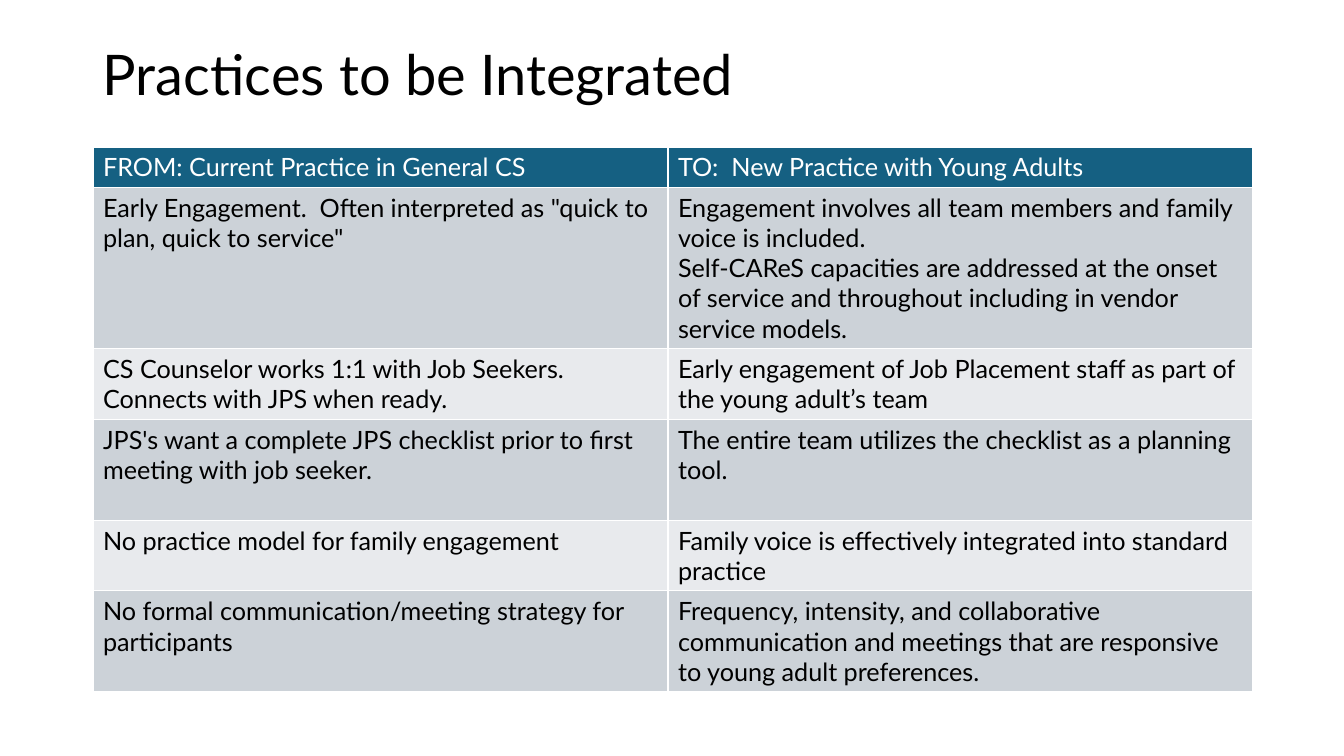
"""Build the slide that compares current practices with new ones."""
from lxml.etree import SubElement
from pptx import Presentation
from pptx.dml.color import RGBColor
from pptx.enum.text import MSO_ANCHOR
from pptx.oxml.ns import qn
from pptx.util import Emu, Pt

EMU_PER_PX = 914400 / 100.8
FONT = "Lato"
BLACK = RGBColor(0x00, 0x00, 0x00)
WHITE = RGBColor(0xFF, 0xFF, 0xFF)
HEADER_BLUE = RGBColor(0x15, 0x60, 0x82)
BAND_DARK = RGBColor(0xCC, 0xD2, 0xD8)
BAND_LIGHT = RGBColor(0xE8, 0xEA, 0xED)

LEFT, WIDTH = 93, 1160
COLUMN_WIDTHS = (575, 585)
ROW_HEIGHTS = (40, 161, 70, 101, 70, 101)
PRACTICES = (
    ("FROM: Current Practice in General CS",
     "TO:  New Practice with Young Adults"),
    ('Early Engagement.  Often interpreted as "quick to plan, quick to service"',
     "Engagement involves all team members and family voice is included.\n"
     "Self-CAReS capacities are addressed at the onset of service and "
     "throughout including in vendor service models."),
    ("CS Counselor works 1:1 with Job Seekers.  Connects with JPS when ready.",
     "Early engagement of Job Placement staff as part of the young adult’s team"),
    ("JPS's want a complete JPS checklist prior to first meeting with job seeker.",
     "The entire team utilizes the checklist as a planning tool."),
    ("No practice model for family engagement",
     "Family voice is effectively integrated into standard practice"),
    ("No formal communication/meeting strategy for participants",
     "Frequency, intensity, and collaborative communication and meetings that "
     "are responsive to young adult preferences."),
)


def px(length):
    """Turn a length in px into EMU."""
    return Emu(round(length * EMU_PER_PX))


def write_text(frame, text, size=18, color=BLACK, line_spacing=None):
    """Fill a text frame, one paragraph per line of text."""
    frame.text = text
    frame.word_wrap = True
    for paragraph in frame.paragraphs:
        paragraph.line_spacing = line_spacing
        for run in paragraph.runs:
            run.font.name = FONT
            run.font.size = Pt(size)
            run.font.bold = False
            run.font.color.rgb = color


def add_title(slide, text):
    """Add the slide title."""
    title = slide.shapes.add_textbox(px(LEFT), px(19), px(WIDTH), px(116))
    title.text_frame.vertical_anchor = MSO_ANCHOR.MIDDLE
    write_text(title.text_frame, text, size=40, line_spacing=0.9)


def add_borders(cell, color=WHITE, width=1):
    """Draw a line on each side of a table cell."""
    properties = cell._tc.get_or_add_tcPr()
    for side in ("a:lnL", "a:lnR", "a:lnT", "a:lnB"):
        border = SubElement(properties, qn(side), w=str(Pt(width)))
        fill = SubElement(border, qn("a:solidFill"))
        SubElement(fill, qn("a:srgbClr"), val=str(color))


def fill_cell(cell, text, fill, color):
    """Give a table cell its borders, fill and text."""
    add_borders(cell)
    cell.fill.solid()
    cell.fill.fore_color.rgb = fill
    write_text(cell.text_frame, text, color=color)


def add_practice_table(slide):
    """Add the table of practices with a header and banded rows."""
    table = slide.shapes.add_table(
        len(PRACTICES), len(COLUMN_WIDTHS),
        px(LEFT), px(147), px(WIDTH), px(sum(ROW_HEIGHTS))).table
    for column, width in zip(table.columns, COLUMN_WIDTHS):
        column.width = px(width)
    for index, (row, height, texts) in enumerate(
            zip(table.rows, ROW_HEIGHTS, PRACTICES)):
        row.height = px(height)
        band = BAND_DARK if index % 2 else BAND_LIGHT
        fill, color = (band, BLACK) if index else (HEADER_BLUE, WHITE)
        for cell, text in zip(row.cells, texts):
            fill_cell(cell, text, fill, color)


def main():
    """Build and save the slide."""
    presentation = Presentation()
    presentation.slide_width = px(1344)
    presentation.slide_height = px(756)
    slide = presentation.slides.add_slide(presentation.slide_layouts[6])
    add_title(slide, "Practices to be Integrated")
    add_practice_table(slide)
    presentation.save("out.pptx")


if __name__ == "__main__":
    main()
